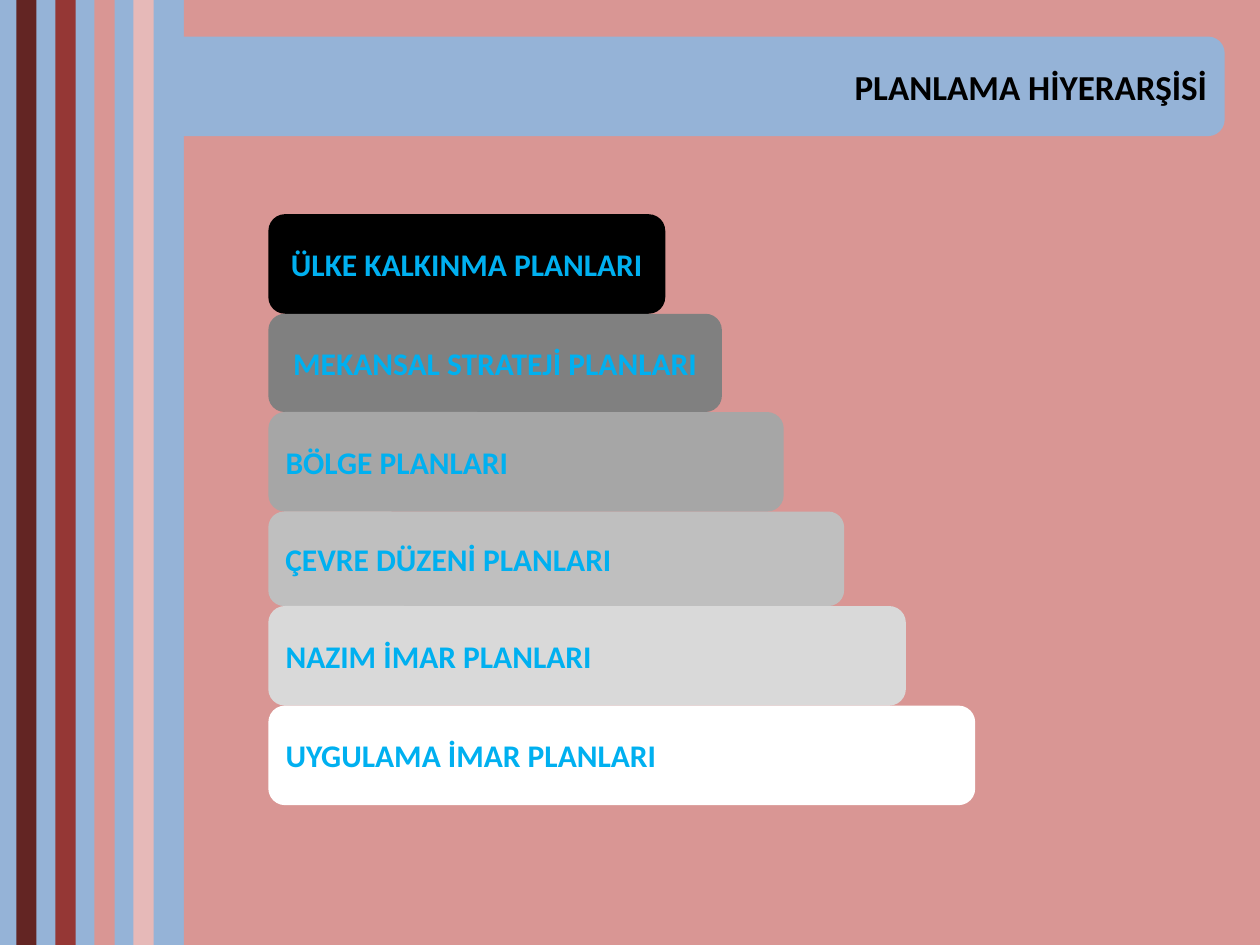
from pptx import Presentation
from pptx.dml.color import RGBColor
from pptx.enum.shapes import MSO_SHAPE
from pptx.enum.text import MSO_ANCHOR, PP_ALIGN
from pptx.util import Pt

PX = 9144
W, H = 1000, 750
THEME = {
    "font": "Calibri",
    "title_size": 20,
    "step_size": 18,
    "band": "95B3D7",
    "ground": "D99694",
    "title": "000000",
    "step": "00B0F0",
    "stripes": ["632523", "953735", "D99694", "E6B9B8"],
    "steps": ["000000", "808080", "A6A6A6", "BFBFBF", "D9D9D9", "FFFFFF"],
}

prs = Presentation()
prs.slide_width, prs.slide_height = W * PX, H * PX
s = prs.slides.add_slide(prs.slide_layouts[6])


def add_block(kind, x, y, w, h, fill):
    sp = s.shapes.add_shape(kind, x * PX, y * PX, w * PX, h * PX)
    sp.shadow.inherit = False
    sp.fill.solid()
    sp.fill.fore_color.rgb = RGBColor.from_string(fill)
    sp.line.fill.background()
    return sp


def set_label(sp, text, size, color, align):
    tf = sp.text_frame
    tf.word_wrap = True
    tf.vertical_anchor = MSO_ANCHOR.MIDDLE
    p = tf.paragraphs[0]
    p.text = text
    p.alignment = align
    font = p.runs[0].font
    font.name = THEME["font"]
    font.size = Pt(size)
    font.bold = True
    font.color.rgb = RGBColor.from_string(color)


BAND_W = 146
add_block(MSO_SHAPE.RECTANGLE, 0, 0, BAND_W, H, THEME["band"])
add_block(MSO_SHAPE.RECTANGLE, BAND_W, 0, W - BAND_W, H, THEME["ground"])

sp = add_block(MSO_SHAPE.ROUNDED_RECTANGLE, 122, 29, 850, 79, THEME["band"])
set_label(sp, "PLANLAMA HİYERARŞİSİ", THEME["title_size"], THEME["title"], PP_ALIGN.RIGHT)

STRIPE_X, STRIPE_W, STRIPE_STEP = 13, 16, 31
for i, fill in enumerate(THEME["stripes"]):
    add_block(MSO_SHAPE.RECTANGLE, STRIPE_X + i * STRIPE_STEP, 0, STRIPE_W, H, fill)

steps = [
    ("ÜLKE KALKINMA PLANLARI", 315, 79, PP_ALIGN.CENTER),
    ("MEKANSAL STRATEJİ PLANLARI", 360, 78, PP_ALIGN.CENTER),
    ("BÖLGE PLANLARI", 409, 79, PP_ALIGN.LEFT),
    ("ÇEVRE DÜZENİ PLANLARI", 457, 75, PP_ALIGN.LEFT),
    ("NAZIM İMAR PLANLARI", 506, 79, PP_ALIGN.LEFT),
    ("UYGULAMA İMAR PLANLARI", 561, 79, PP_ALIGN.LEFT),
]
y = 170
for (text, w, h, align), fill in zip(steps, THEME["steps"]):
    sp = add_block(MSO_SHAPE.ROUNDED_RECTANGLE, 213, y, w, h, fill)
    set_label(sp, text, THEME["step_size"], THEME["step"], align)
    y += h

prs.save("out.pptx")
